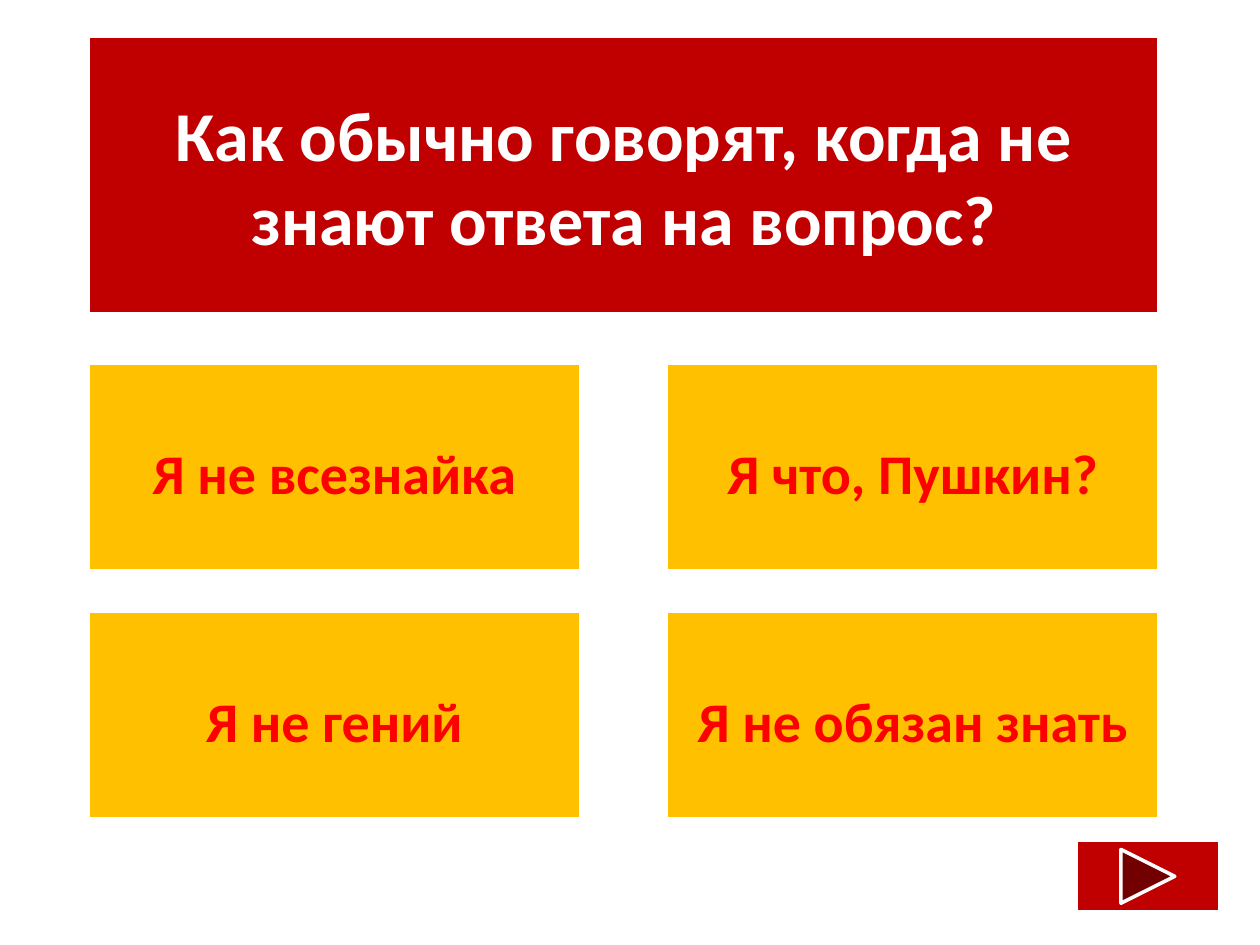
"""Builds a quiz slide with one question, four answers and a next button."""
from dataclasses import dataclass
from pptx import Presentation
from pptx.dml.color import RGBColor as Rgb
from pptx.enum.shapes import MSO_SHAPE as Kind
from pptx.enum.text import MSO_ANCHOR as Anchor, PP_ALIGN as Align
from pptx.util import Inches, Pt


@dataclass
class Theme:
    red: Rgb = Rgb(0xC0, 0x00, 0x00)
    gold: Rgb = Rgb(0xFF, 0xC0, 0x00)
    white: Rgb = Rgb(0xFF, 0xFF, 0xFF)
    bright: Rgb = Rgb(0xFF, 0x00, 0x00)
    font: str = "Calibri"
    large: int = 40
    small: int = 32
    edge: int = 2


theme = Theme()
deck = Presentation()
deck.slide_width, deck.slide_height = Inches(10), Inches(7.5)
slide = deck.slides.add_slide(deck.slide_layouts[6])


def add_box(kind, left, top, width, height, fill):
    box = slide.shapes.add_shape(kind, *map(Inches, (left, top, width, height)))
    box.shadow.inherit = False
    box.fill.solid()
    box.fill.fore_color.rgb = fill
    box.line.color.rgb = theme.white
    box.line.width = Pt(theme.edge)
    return box


def add_text(box, text, size, color):
    frame = box.text_frame
    frame.word_wrap = True
    frame.vertical_anchor = Anchor.MIDDLE
    frame.text = text
    line = frame.paragraphs[0]
    line.alignment = Align.CENTER
    font = line.runs[0].font
    font.name, font.size, font.bold = theme.font, Pt(size), True
    font.color.rgb = color
    return line


left, top, wide = 0.7, 2.88, 8.5
cell_w, cell_h = 3.91, 1.65
step_x, step_y = wide - cell_w, 1.97

title = add_box(Kind.RECTANGLE, left, 0.29, wide, 2.2, theme.red)
add_text(title, "Как обычно говорят, когда не знают ответа на вопрос?",
         theme.large, theme.white)

answers = [
    ["Я не всезнайка", "Я что, Пушкин?"],
    ["Я не гений", "Я не обязан знать"],
]
for row, pair in enumerate(answers):
    for col, answer in enumerate(pair):
        card = add_box(Kind.RECTANGLE, left + col * step_x, top + row * step_y,
                       cell_w, cell_h, theme.gold)
        line = add_text(card, answer, theme.small, theme.bright)
        line.line_spacing = 1.15
        line.space_after = Pt(10)

add_box(Kind.ACTION_BUTTON_FORWARD_OR_NEXT, 8.54, 6.67, 1.14, 0.57, theme.red)

deck.save("out.pptx")
